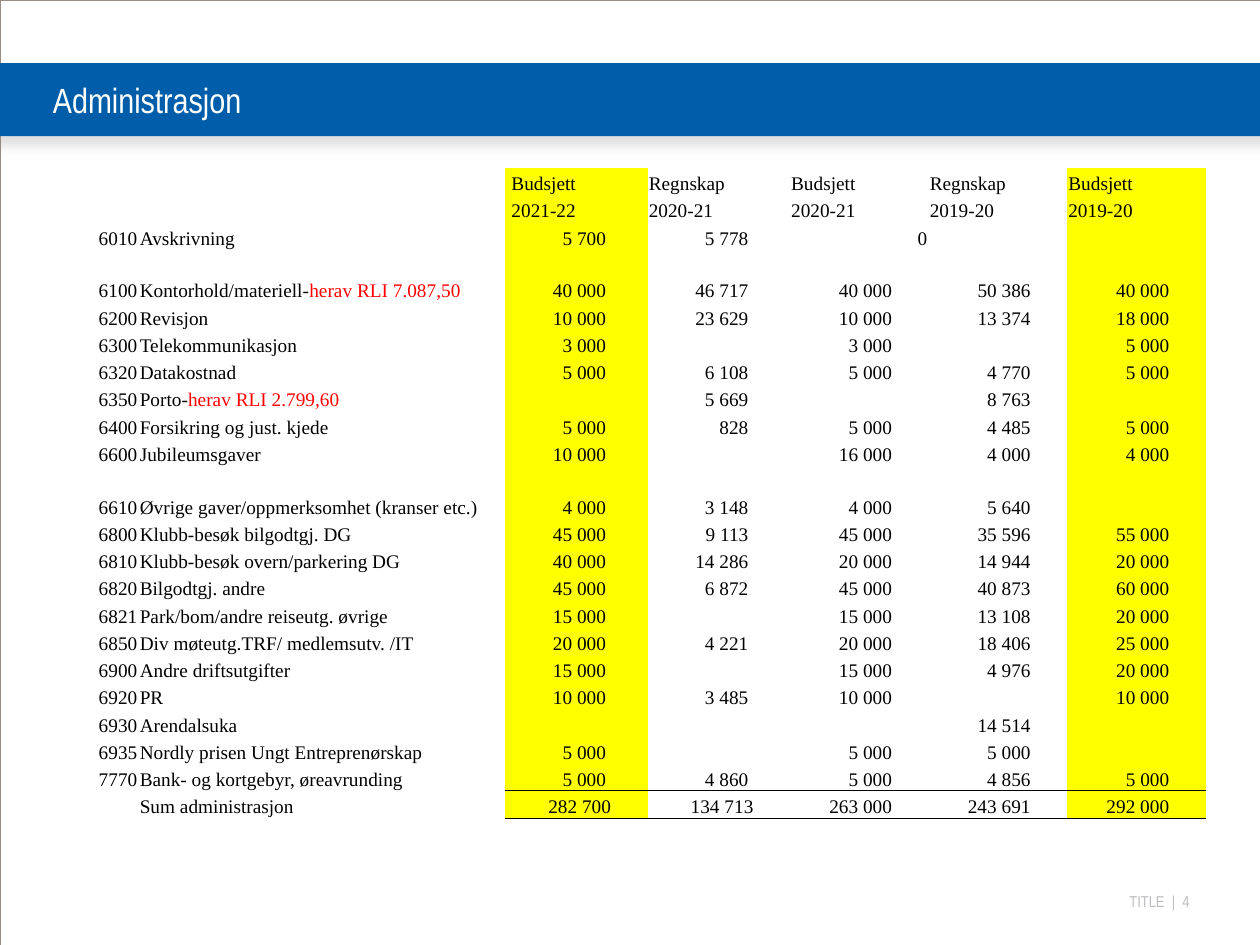
from lxml.etree import SubElement as Sub
from pptx import Presentation
from pptx.dml.color import RGBColor as RGB
from pptx.enum.shapes import MSO_SHAPE as Shape
from pptx.enum.text import MSO_ANCHOR as Anchor, PP_ALIGN as Align
from pptx.oxml.ns import qn
from pptx.util import Inches, Pt

WHITE = RGB(0xFF, 0xFF, 0xFF)
BLACK = RGB(0, 0, 0)
BLUE = RGB(0x00, 0x5D, 0xAA)
YELLOW = RGB(0xFF, 0xFF, 0x00)
RED = RGB(0xFF, 0, 0)
GREY = RGB(0xBC, 0xBD, 0xC0)
TAUPE = RGB(0x95, 0x8D, 0x85)
SHADE = RGB(0x80, 0x80, 0x80)

NO_STYLE = "{2D5ABB26-0587-4C30-8999-92F81FD0307C}"
COLS = [0.52, 2.78, 0.13, 1.13, 1.13, 1.1, 1.1, 1.1]
FIRST = 3                      # first column of figures
MARKED = (3, 7)                # yellow columns
TALL = (3, 10)                 # rows of double height
TALL_H = 0.42
TABLE_H = 5.17

HEADS = [
    ["Budsjett", "Regnskap", "Budsjett", "Regnskap", "Budsjett"],
    ["2021-22", "2020-21", "2020-21", "2019-20", "2019-20"],
]
# Account, name, red remark, five figures
ITEMS = [
    ("6010", "Avskrivning", "", "5 700", "5 778", "0", "", ""),
    ("6100", "Kontorhold/materiell-", "herav RLI 7.087,50",
     "40 000", "46 717", "40 000", "50 386", "40 000"),
    ("6200", "Revisjon", "", "10 000", "23 629", "10 000", "13 374", "18 000"),
    ("6300", "Telekommunikasjon", "", "3 000", "", "3 000", "", "5 000"),
    ("6320", "Datakostnad", "", "5 000", "6 108", "5 000", "4 770", "5 000"),
    ("6350", "Porto-", "herav RLI 2.799,60", "", "5 669", "", "8 763", ""),
    ("6400", "Forsikring og just. kjede", "",
     "5 000", "828", "5 000", "4 485", "5 000"),
    ("6600", "Jubileumsgaver", "", "10 000", "", "16 000", "4 000", "4 000"),
    ("6610", "Øvrige gaver/oppmerksomhet (kranser etc.)", "",
     "4 000", "3 148", "4 000", "5 640", ""),
    ("6800", "Klubb-besøk bilgodtgj. DG", "",
     "45 000", "9 113", "45 000", "35 596", "55 000"),
    ("6810", "Klubb-besøk overn/parkering DG", "",
     "40 000", "14 286", "20 000", "14 944", "20 000"),
    ("6820", "Bilgodtgj. andre", "",
     "45 000", "6 872", "45 000", "40 873", "60 000"),
    ("6821", "Park/bom/andre reiseutg. øvrige", "",
     "15 000", "", "15 000", "13 108", "20 000"),
    ("6850", "Div møteutg.TRF/ medlemsutv. /IT", "",
     "20 000", "4 221", "20 000", "18 406", "25 000"),
    ("6900", "Andre driftsutgifter", "",
     "15 000", "", "15 000", "4 976", "20 000"),
    ("6920", "PR", "", "10 000", "3 485", "10 000", "", "10 000"),
    ("6930", "Arendalsuka", "", "", "", "", "14 514", ""),
    ("6935", "Nordly prisen Ungt Entreprenørskap", "",
     "5 000", "", "5 000", "5 000", ""),
    ("7770", "Bank- og kortgebyr, øreavrunding", "",
     "5 000", "4 860", "5 000", "4 856", "5 000"),
    ("", "Sum administrasjon", "",
     "282 700", "134 713", "263 000", "243 691", "292 000"),
]


class Deck:
    sans = "Arial Narrow"
    serif = "Times New Roman"

    def __init__(self):
        self.prs = Presentation()
        self.prs.slide_width, self.prs.slide_height = Inches(10), Inches(7.5)
        self.slide = self.prs.slides.add_slide(self.prs.slide_layouts[6])

    def style(self, run, font, size, color):
        run.font.name, run.font.size = font, Pt(size)
        run.font.color.rgb = color

    def rect(self, box, fill=None, line=None):
        shape = self.slide.shapes.add_shape(Shape.RECTANGLE, *map(Inches, box))
        shape.shadow.inherit = False
        if fill is None:
            shape.fill.background()
        else:
            shape.fill.solid()
            shape.fill.fore_color.rgb = fill
        if line is None:
            shape.line.fill.background()
        else:
            shape.line.color.rgb, shape.line.width = line, Pt(0.13)
        return shape

    def shadow(self, shape):
        fx = shape.element.spPr.find(qn("a:effectLst"))
        out = Sub(fx, qn("a:outerShdw"), blurRad=str(Pt(7)), dist=str(Pt(4.8)),
                  dir="5400000", algn="t", rotWithShape="0")
        tint = Sub(out, qn("a:srgbClr"), val=str(SHADE))
        Sub(tint, qn("a:alpha"), val="25000")

    def text(self, box, words, size, color, align=Align.LEFT, anchor=Anchor.TOP):
        frame = self.slide.shapes.add_textbox(*map(Inches, box)).text_frame
        frame.margin_left = frame.margin_right = 0
        frame.margin_top = frame.margin_bottom = 0
        frame.word_wrap, frame.vertical_anchor = True, anchor
        frame.text = words
        para = frame.paragraphs[0]
        para.alignment = align
        self.style(para.runs[0], self.sans, size, color)

    def table(self, left, top, rows):
        count = len(rows)
        shape = self.slide.shapes.add_table(
            count, len(COLS), Inches(left), Inches(top),
            Inches(sum(COLS)), Inches(TABLE_H))
        grid = shape.table
        grid.first_row = grid.horz_banding = False
        grid._tbl.tblPr.find(qn("a:tableStyleId")).text = NO_STYLE
        for col, width in zip(grid.columns, COLS):
            col.width = Inches(width)
        low = (TABLE_H - TALL_H * len(TALL)) / (count - len(TALL))
        for r, row in enumerate(grid.rows):
            row.height = Inches(TALL_H if r in TALL else low)
        for r, (code, name, note, *nums) in enumerate(rows):
            for c, words in enumerate([code, name, "", *nums]):
                cell = grid.cell(r, c)
                self.cell(cell, words, note if c == 1 else "")
                if c >= FIRST:
                    self.rule(cell, r, count)
                if c in MARKED:
                    cell.fill.solid()
                    cell.fill.fore_color.rgb = YELLOW
                else:
                    cell.fill.background()
                self.place(cell, r, c, count)
        for r in TALL:
            grid.cell(r, 1).merge(grid.cell(r, 2))

    def cell(self, cell, words, note):
        cell.margin_left = cell.margin_right = cell.margin_top = Inches(0.01)
        cell.margin_bottom = 0
        cell.vertical_anchor = Anchor.BOTTOM
        para = cell.text_frame.paragraphs[0]
        for part, color in ((words, BLACK), (note, RED)):
            if part:
                run = para.add_run()
                run.text = part
                self.style(run, self.serif, 11, color)
        if not words:
            Sub(para._p, qn("a:endParaRPr"), sz="1100")

    def place(self, cell, r, c, count):
        para = cell.text_frame.paragraphs[0]
        if c == 0:
            para.alignment = Align.RIGHT
        elif c >= FIRST and r < len(HEADS):
            cell.margin_left = Inches(0.05 if c == FIRST else 0.01)
        elif c >= FIRST:
            para.alignment = Align.RIGHT
            if para.text != "0":
                wide = c < FIRST + 2 and r < count - 1
                cell.margin_right = Inches(0.33 if wide else 0.29)

    def rule(self, cell, r, count):
        # Thin lines above and below the sum row
        sides = {count - 2: ["a:lnB"], count - 1: ["a:lnT", "a:lnB"]}
        for side in sides.get(r, []):
            line = Sub(cell._tc.get_or_add_tcPr(), qn(side), w=str(Pt(0.5)))
            Sub(Sub(line, qn("a:solidFill")), qn("a:srgbClr"), val=str(BLACK))


def main():
    deck = Deck()
    # Frame, footer and title band
    deck.text((7.75, 7.08, 1.69, 0.15), "TITLE  |  4", 9, GREY, Align.RIGHT)
    deck.rect((0, 0, 10, 7.5), line=TAUPE)
    deck.shadow(deck.rect((-0.08, 0.5, 10.17, 0.58), fill=BLUE))
    deck.text((0.42, 0.5, 9.58, 0.58), "Administrasjon", 20, WHITE,
              anchor=Anchor.MIDDLE)
    # Budget table
    heads = [("", "", "", *head) for head in HEADS]
    deck.table(0.58, 1.33, heads + ITEMS)
    deck.prs.save("out.pptx")


if __name__ == "__main__":
    main()
